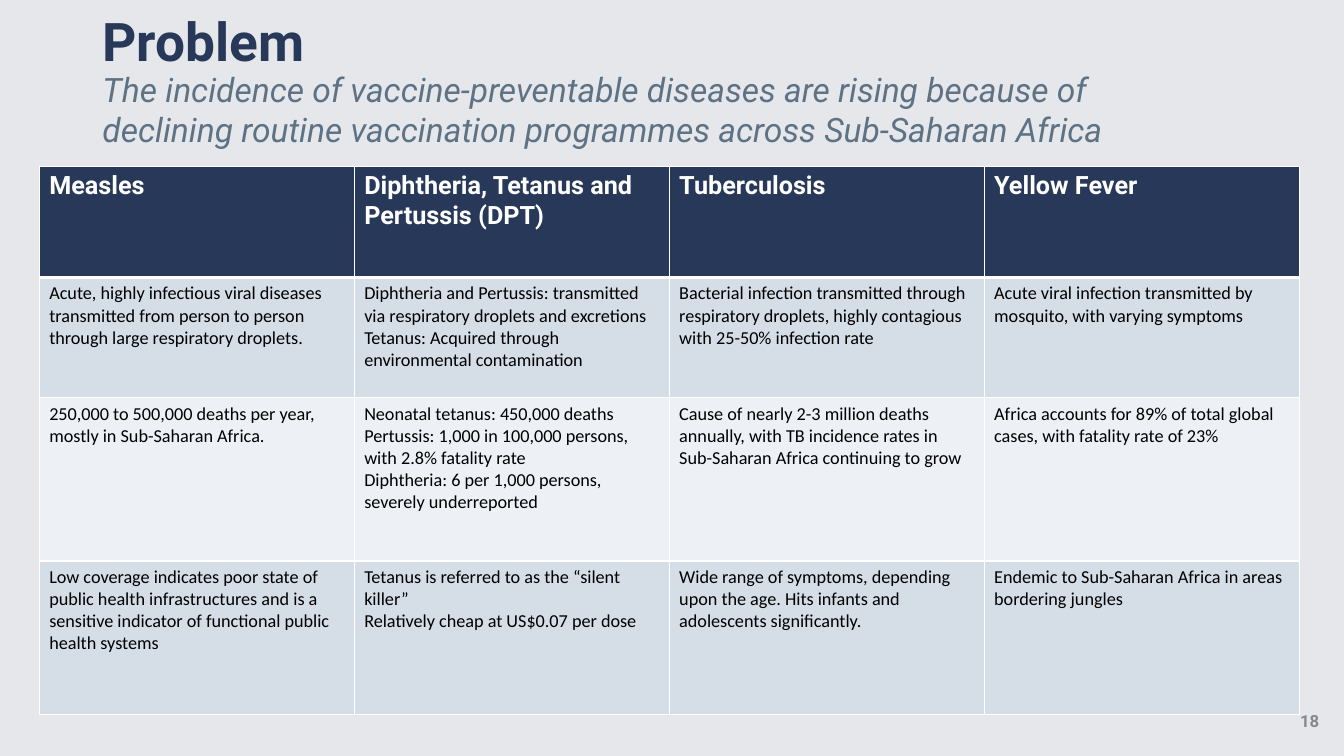
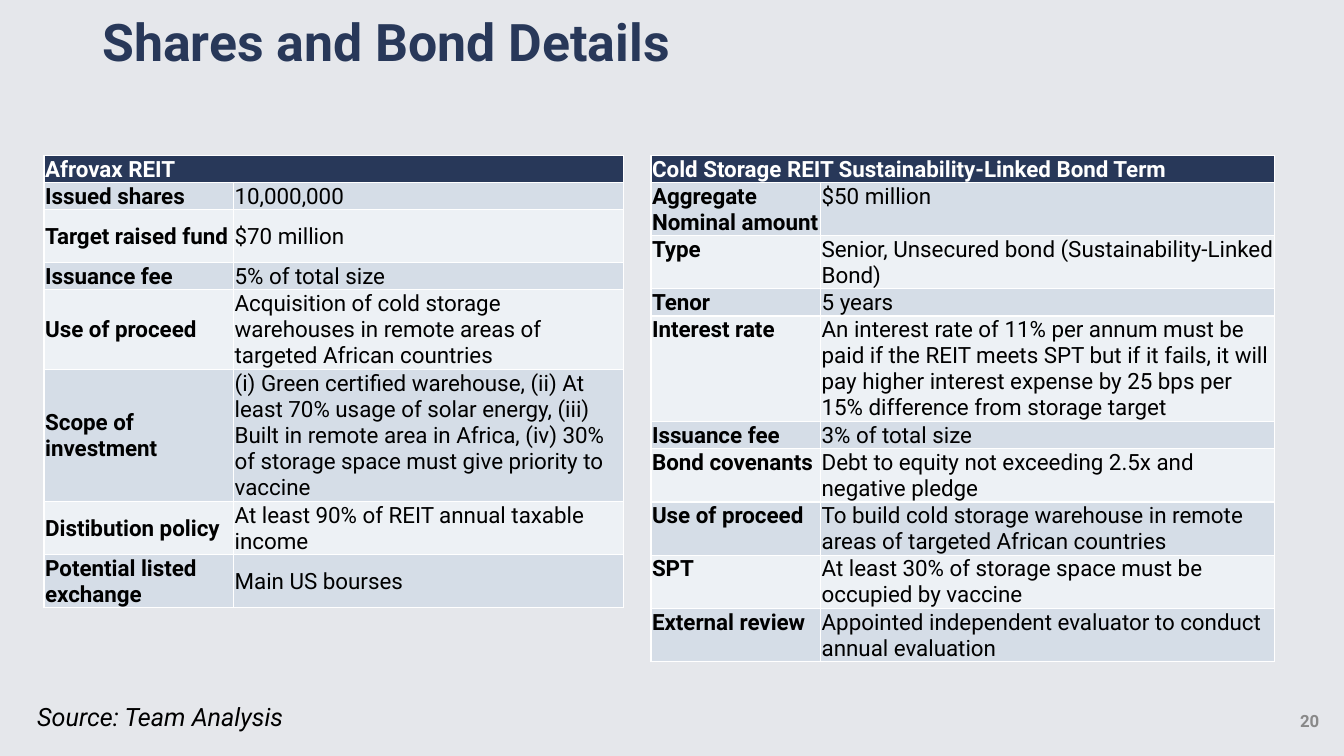
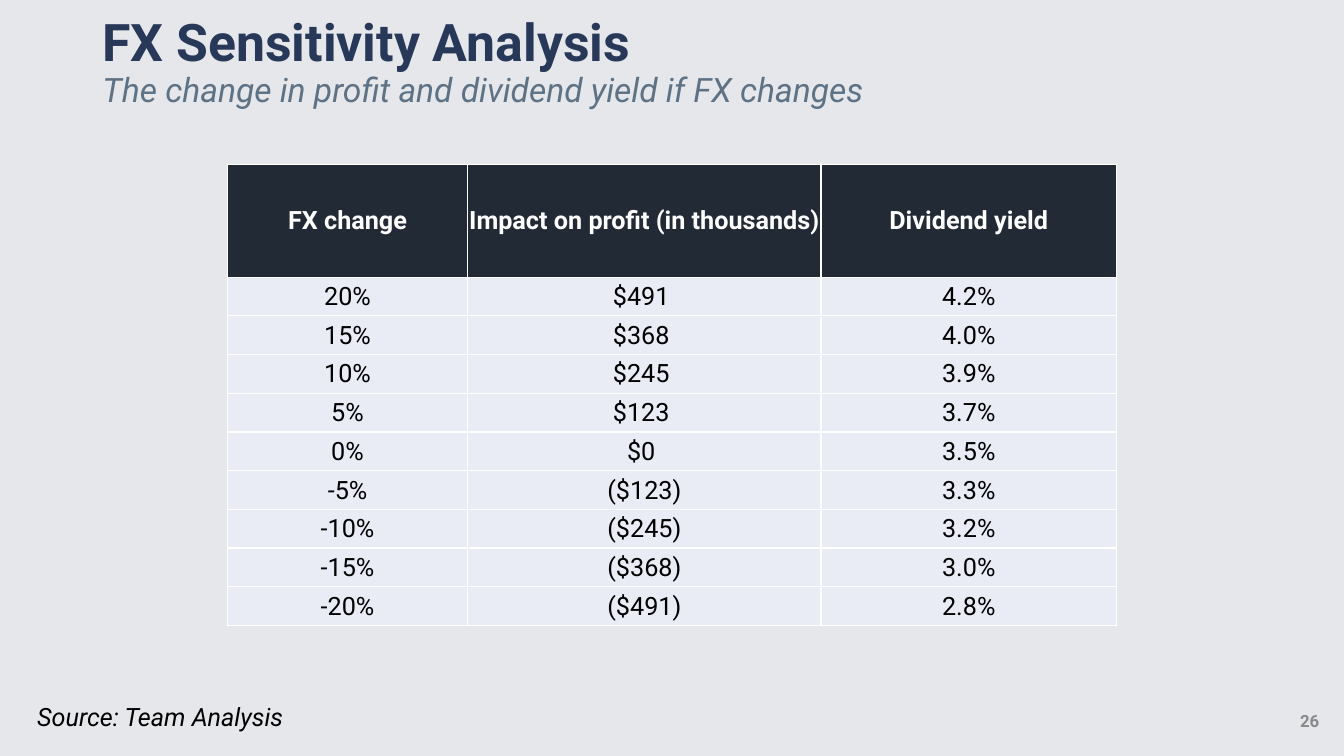
from dataclasses import dataclass

from lxml import etree
from pptx import Presentation, util as u
from pptx.dml.color import RGBColor
from pptx.enum import text as t
from pptx.oxml import ns

# Shared look
NAVY, SLATE, GREY = "283859", "5D7285", "898989"
PAPER, WHITE, BLACK = "E5E7EB", "FFFFFF", "000000"
BANDS = ("D5DDE7", "EDF1F5")
FONT = "Roboto"
LEFT, MID, RIGHT = t.PP_ALIGN.LEFT, t.PP_ALIGN.CENTER, t.PP_ALIGN.RIGHT
TOP, CENTER = t.MSO_ANCHOR.TOP, t.MSO_ANCHOR.MIDDLE
TIGHT = (0.75, 0.75, 0.75, 0)
LINE, SLACK = 18.75, 0.5  # height of a 16 pt line, extra height of a row


@dataclass
class Box:
    x: float
    y: float
    w: float
    h: float


@dataclass
class Grid:
    x: float
    y: float
    cols: list[float]
    rows: list[float]
    cells: list[tuple[str, ...]]
    size: float
    head: float
    font: str = FONT
    fill: str = NAVY
    bands: tuple[str, ...] = BANDS
    inset: tuple[float, ...] = TIGHT
    anchor: t.MSO_ANCHOR = TOP
    align: t.PP_ALIGN = LEFT
    rule: float = 1  # line below the header
    label: bool = False  # bold first column


def tint(code: str) -> RGBColor:
    return RGBColor.from_string(code)


def write(frame, words: str, *, size: float, color: str = BLACK, font: str = FONT,
          bold: bool = False, slant: bool = False, align: t.PP_ALIGN = LEFT,
          space: float = 1) -> None:
    """Fill a text frame, one paragraph per line of words."""
    frame.text = words
    for para in frame.paragraphs:
        para.alignment, para.line_spacing = align, space
        para.space_before = u.Pt(0)
        for run in para.runs:
            face = run.font
            face.name, face.size = font, u.Pt(size)
            face.bold, face.italic = bold, slant
            face.color.rgb = tint(color)


def place(shape, box: Box, anchor: t.MSO_ANCHOR = TOP):
    """Move a text shape and return its frame, set to wrap."""
    shape.left, shape.top = u.Pt(box.x), u.Pt(box.y)
    shape.width, shape.height = u.Pt(box.w), u.Pt(box.h)
    frame = shape.text_frame
    frame.word_wrap, frame.auto_size = True, t.MSO_AUTO_SIZE.NONE
    frame.vertical_anchor = anchor
    return frame


def note(slide, words: str, box: Box, anchor: t.MSO_ANCHOR = TOP, **form) -> None:
    shape = slide.shapes.add_textbox(0, 0, 0, 0)
    write(place(shape, box, anchor), words, **form)


def edge(cell, top: float, base: float) -> None:
    """Draw white lines on all four sides of a cell."""
    props = cell._tc.get_or_add_tcPr()
    for side, width in (("L", 1), ("R", 1), ("T", top), ("B", base)):
        line = etree.SubElement(props, ns.qn(f"a:ln{side}"), w=str(u.Pt(width)))
        fill = etree.SubElement(line, ns.qn("a:solidFill"))
        etree.SubElement(fill, ns.qn("a:srgbClr"), val=WHITE)


def draw(slide, grid: Grid) -> None:
    """Draw a table; a header with one entry spans all columns."""
    table = slide.shapes.add_table(
        len(grid.rows), len(grid.cols), u.Pt(grid.x), u.Pt(grid.y),
        u.Pt(sum(grid.cols)), u.Pt(sum(grid.rows))).table
    table.horz_banding = False
    for col, width in zip(table.columns, grid.cols):
        col.width = u.Pt(width)
    if len(grid.cells[0]) == 1:
        table.cell(0, 0).merge(table.cell(0, len(grid.cols) - 1))
    for r, (row, words) in enumerate(zip(table.rows, grid.cells)):
        row.height = u.Pt(grid.rows[r])
        top = r == 0
        for c, cell in enumerate(row.cells):
            edge(cell, grid.rule if r == 1 else 1, grid.rule if top else 1)
            cell.fill.solid()
            shade = grid.fill if top else grid.bands[(r - 1) % len(grid.bands)]
            cell.fill.fore_color.rgb = tint(shade)
            cell.vertical_anchor = grid.anchor
            (cell.margin_left, cell.margin_top, cell.margin_right,
             cell.margin_bottom) = map(u.Pt, grid.inset)
            if c < len(words):
                write(cell.text_frame, words[c], align=grid.align,
                      size=grid.head if top else grid.size,
                      font=FONT if top else grid.font,
                      color=WHITE if top else BLACK,
                      bold=top or (grid.label and c == 0))


def start(deck, title: str, number: int, *, size: float = 37, wide: float = 828,
          sub: str = "", box: Box | None = None, source: bool = True):
    """Add a slide with title, optional subtitle, page number and source."""
    slide = deck.slides.add_slide(deck.slide_layouts[1 if sub else 5])
    write(place(slide.shapes.title, Box(66, -0.75, wide, 65), CENTER), title,
          size=size, color=NAVY, bold=True, space=0.9)
    if sub:
        frame = place(slide.placeholders[1], box)
        write(frame, sub, size=24, color=SLATE, slant=True)
        props = frame.paragraphs[0]._p.get_or_add_pPr()
        props.set("marL", "0")
        props.set("indent", "0")
        etree.SubElement(props, ns.qn("a:buNone"))
    note(slide, str(number), Box(733.5, 500.5, 216, 28.75), CENTER,
         size=12, color=GREY, bold=True, align=RIGHT)
    if source:
        note(slide, "Source: Team Analysis", Box(19.5, 497.5, 480, 29),
             size=18, slant=True)
    return slide


def terms(x: float, cols: list[float], head: str, body: list[tuple[int, str, str]],
          anchor: t.MSO_ANCHOR) -> Grid:
    """Make a two-column table; each row gives its line count, label and text."""
    counts = [1] + [row[0] for row in body]
    return Grid(x, 111, cols, [n * LINE + SLACK for n in counts],
                [(head,)] + [row[1:] for row in body],
                size=16, head=16, anchor=anchor, label=True)


ILLS = [
    ("Measles", "Diphtheria, Tetanus and Pertussis (DPT)", "Tuberculosis", "Yellow Fever"),
    ("Acute, highly infectious viral diseases transmitted from person to person "
     "through large respiratory droplets.",
     "Diphtheria and Pertussis: transmitted via respiratory droplets and excretions\n"
     "Tetanus: Acquired through environmental contamination",
     "Bacterial infection transmitted through respiratory droplets, highly contagious "
     "with 25-50% infection rate",
     "Acute viral infection transmitted by mosquito, with varying symptoms"),
    ("250,000 to 500,000 deaths per year, mostly in Sub-Saharan Africa.",
     "Neonatal tetanus: 450,000 deaths\n"
     "Pertussis: 1,000 in 100,000 persons, with 2.8% fatality rate\n"
     "Diphtheria: 6 per 1,000 persons, severely underreported",
     "Cause of nearly 2-3 million deaths annually, with TB incidence rates in "
     "Sub-Saharan Africa continuing to grow",
     "Africa accounts for 89% of total global cases, with fatality rate of 23%"),
    ("Low coverage indicates poor state of public health infrastructures and is a "
     "sensitive indicator of functional public health systems",
     "Tetanus is referred to as the “silent killer”\n"
     "Relatively cheap at US$0.07 per dose",
     "Wide range of symptoms, depending upon the age. Hits infants and adolescents "
     "significantly.",
     "Endemic to Sub-Saharan Africa in areas bordering jungles"),
]

BOND = [
    (2, "Aggregate Nominal amount", "$50 million"),
    (2, "Type", "Senior, Unsecured bond (Sustainability-Linked Bond)"),
    (1, "Tenor", "5 years"),
    (4, "Interest rate",
     "An interest rate of 11% per annum must be paid if the REIT meets SPT but if it "
     "fails, it will pay higher interest expense by 25 bps per 15% difference from "
     "storage target"),
    (1, "Issuance fee", "3% of total size"),
    (2, "Bond covenants", "Debt to equity not exceeding 2.5x and negative pledge"),
    (2, "Use of proceed",
     "To build cold storage warehouse in remote areas of targeted African countries"),
    (2, "SPT", "At least 30% of storage space must be occupied by vaccine"),
    (2, "External review", "Appointed independent evaluator to conduct annual evaluation"),
]

SHARES = [
    (1, "Issued shares", "10,000,000"),
    (2, "Target raised fund ", "$70 million"),
    (1, "Issuance fee", "5% of total size"),
    (3, "Use of proceed",
     "Acquisition of cold storage warehouses in remote areas of targeted African "
     "countries"),
    (5, "Scope of investment",
     "(i) Green certified warehouse, (ii) At least 70% usage of solar energy, (iii) "
     "Built in remote area in Africa, (iv) 30% of storage space must give priority to "
     "vaccine"),
    (2, "Distibution policy", "At least 90% of REIT annual taxable income"),
    (2, "Potential listed exchange", "Main US bourses"),
]

YIELDS = [
    ("FX change", "Impact on profit (in thousands)", "Dividend yield"),
    ("20%", "$491 ", "4.2%"),
    ("15%", "$368 ", "4.0%"),
    ("10%", "$245 ", "3.9%"),
    ("5%", "$123 ", "3.7%"),
    ("0%", "$0 ", "3.5%"),
    ("-5%", "($123)", "3.3%"),
    ("-10%", "($245)", "3.2%"),
    ("-15%", "($368)", "3.0%"),
    ("-20%", "($491)", "2.8%"),
]


def main() -> None:
    deck = Presentation()
    deck.slide_width, deck.slide_height = u.Pt(960), u.Pt(540)
    ground = deck.slide_master.background.fill
    ground.solid()
    ground.fore_color.rgb = tint(PAPER)

    # Diseases
    slide = start(deck, "Problem", 18, size=38, wide=459.5, source=False,
                  sub="The incidence of vaccine-preventable diseases are rising because "
                      "of declining routine vaccination programmes across Sub-Saharan "
                      "Africa",
                  box=Box(66, 45.5, 803, 65.5))
    draw(slide, Grid(28, 118.75, [225] * 4, [79.5, 86, 116.5, 109.5], ILLS,
                     size=13, head=18, font="Calibri",
                     inset=(7.2, 3.6, 7.2, 3.6), rule=3))

    # Shares and bond
    slide = start(deck, "Shares and Bond Details", 20)
    draw(slide, terms(465, [121.2, 324.3],
                      "Cold Storage REIT Sustainability-Linked Bond Term", BOND, TOP))
    draw(slide, terms(31.5, [135.4, 278.6], "Afrovax REIT", SHARES, CENTER))

    # Currency effects
    slide = start(deck, "FX Sensitivity Analysis", 26,
                  sub="The change in profit and dividend yield if FX changes",
                  box=Box(66, 45.5, 574, 38))
    draw(slide, Grid(162.5, 117.5, [171.5, 252.5, 211], [80.5] + [27.65] * 9, YIELDS,
                     size=18, head=18, fill="222A35", bands=("E9EBF5",),
                     anchor=CENTER, align=MID))

    deck.save("out.pptx")


if __name__ == "__main__":
    main()
